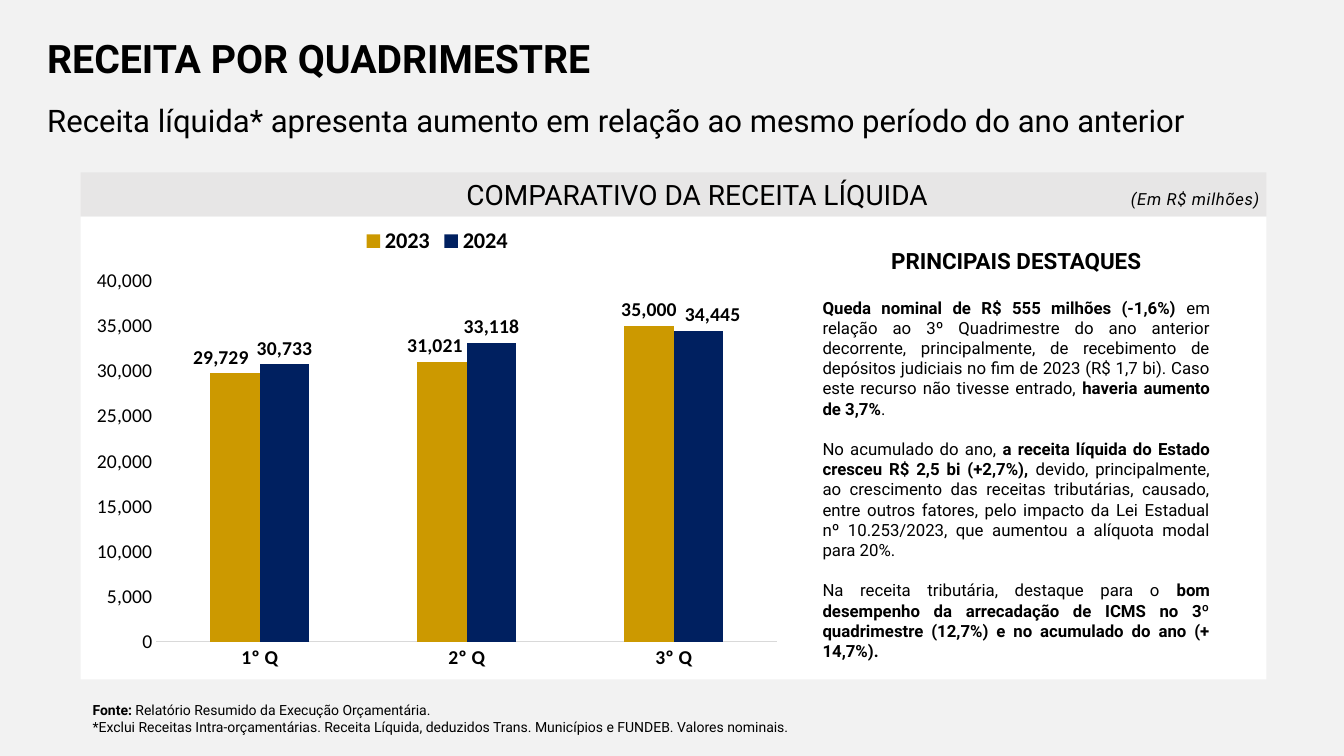
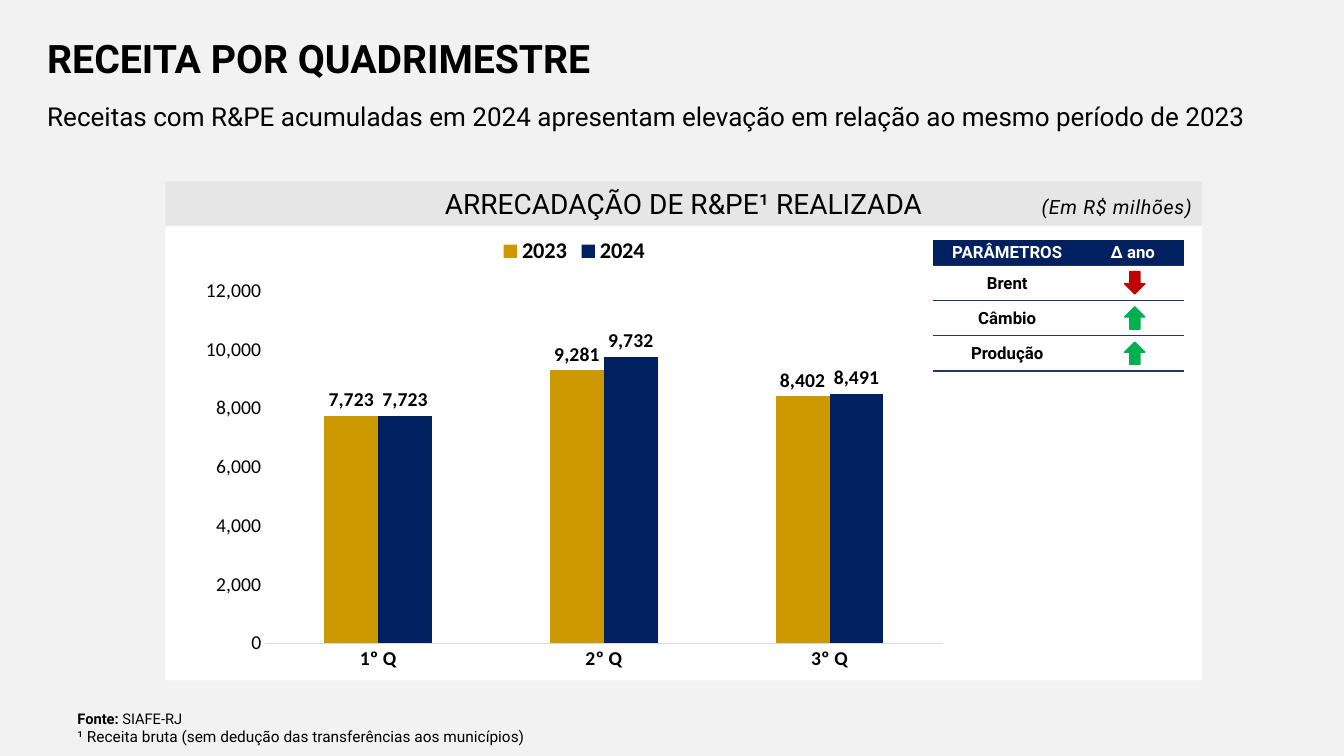
from lxml import etree
from pptx import Presentation
from pptx.chart.data import CategoryChartData
from pptx.dml.color import RGBColor
from pptx.enum import chart as charts, shapes, text
from pptx.oxml import ns
from pptx.util import Inches, Pt

BACKGROUND, BAND, WHITE, BLACK = "F2F2F2", "E7E6E6", "FFFFFF", "000000"
GOLD, NAVY, RULE, AXIS = "CC9900", "002060", "203864", "D9D9D9"
RED, GREEN = "C00000", "00B050"
BODY_FONT, CHART_FONT = "Roboto", "Calibri"
NO_TABLE_STYLE = "{2D5ABB26-0587-4C30-8999-92F81FD0307C}"
ALIGN, ANCHOR = text.PP_ALIGN, text.MSO_ANCHOR

TITLE = "RECEITA POR QUADRIMESTRE"
UNIT = "(Em R$ milhões)"
QUARTERS = ["1º Q", "2º Q", "3º Q"]
BAND_HEIGHT = 0.44

PAGES = [
    dict(
        subtitle="Receita líquida* apresenta aumento em relação ao mesmo período do ano anterior",
        subtitle_size=22.2, subtitle_spacing=1.2,
        heading="COMPARATIVO DA RECEITA LÍQUIDA", heading_indent=0.57,
        card=(0.8, 1.71, 11.76, 5.03),
        unit_box=(11.1, 1.72, 1.49, 0.4), unit_size=11.9, unit_spacing=1.1,
        unit_anchor=ANCHOR.BOTTOM,
        chart_box=(0.82, 2.14, 7.03, 4.6), step=5000, top=40000, number_format="#,##0",
        series={"2023": (29729, 31021, 35000), "2024": (30733, 33118, 34445)},
        label_shifts={("2023", 0): -0.02, ("2023", 1): -0.01, ("2024", 2): 0.02},
        source_box=(0.82, 6.91, 7.85, 0.44),
        source=[
            (10, [("Fonte: ", True), ("Relatório Resumido da Execução Orçamentária.", False)]),
            (10, [("*Exclui Receitas Intra-orçamentárias. Receita Líquida, deduzidos "
                   "Trans. Municípios e FUNDEB. Valores nominais.", False)]),
        ],
    ),
    dict(
        subtitle="Receitas com R&PE acumuladas em 2024 apresentam elevação em relação ao mesmo período de 2023",
        subtitle_size=18.6, subtitle_spacing=1.0,
        heading="ARRECADAÇÃO DE R&PE¹ REALIZADA", heading_indent=0.1,
        card=(1.64, 1.8, 10.28, 4.95),
        unit_box=(10.06, 1.84, 1.86, 0.4), unit_size=14, unit_spacing=1.2,
        unit_anchor=ANCHOR.TOP,
        chart_box=(1.89, 2.24, 7.61, 4.51), step=2_000_000_000, top=12_000_000_000,
        number_format="#,##0,,",
        series={"2023": (7_723_000_000, 9_281_000_000, 8_402_000_000),
                "2024": (7_723_000_000, 9_732_000_000, 8_491_000_000)},
        label_shifts={},
        source_box=(0.67, 6.99, 12.01, 0.46),
        source=[
            (10.5, [("Fonte: ", True), ("SIAFE-RJ", False)]),
            (11, [("¹ Receita bruta (sem dedução das transferências aos municípios)", False)]),
        ],
    ),
]

HIGHLIGHTS_TITLE = "PRINCIPAIS DESTAQUES"
HIGHLIGHTS = [
    [("Queda nominal de R$ 555 milhões (-1,6%)", True),
     (" em relação ao 3º Quadrimestre do ano anterior decorrente, principalmente, de "
      "recebimento de depósitos judiciais no fim de 2023 (R$ 1,7 bi). Caso este recurso "
      "não tivesse entrado, ", False),
     ("haveria aumento de 3,7%", True), (".", False)],
    [("No acumulado do ano, ", False),
     ("a receita líquida do Estado cresceu R$ 2,5 bi (+2,7%), ", True),
     ("devido, principalmente, ao crescimento das receitas tributárias, causado, entre "
      "outros fatores, pelo impacto da Lei Estadual nº 10.253/2023, que aumentou a "
      "alíquota modal para 20%.", False)],
    [("Na receita tributária, destaque para o ", False),
     ("bom desempenho da arrecadação de ICMS no 3º quadrimestre (12,7%) e no acumulado "
      "do ano (+ 14,7%).", True)],
]

PARAMETERS_HEAD = ("PARÂMETROS", "∆ ano")
PARAMETERS = [("Brent", "down"), ("Câmbio", "up"), ("Produção", "up")]
ARROWS = {"down": (shapes.MSO_SHAPE.DOWN_ARROW, RED), "up": (shapes.MSO_SHAPE.UP_ARROW, GREEN)}


def rgb(value):
    return RGBColor.from_string(value)


def inches(box):
    return [Inches(length) for length in box]


def style(font, size, color=BLACK, bold=False, name=BODY_FONT):
    font.size, font.bold, font.name = Pt(size), bold, name
    font.color.rgb = rgb(color)


def write(frame, paragraphs, align=ALIGN.LEFT, anchor=ANCHOR.TOP, spacing=1.0):
    frame.word_wrap = True
    frame.vertical_anchor = anchor
    for index, (size, runs) in enumerate(paragraphs):
        paragraph = frame.paragraphs[0] if index == 0 else frame.add_paragraph()
        paragraph.alignment, paragraph.line_spacing = align, spacing
        for words, bold in runs:
            run = paragraph.add_run()
            run.text = words
            style(run.font, size, bold=bold)
    return frame


def add_text(slide, box, paragraphs, **layout):
    return write(slide.shapes.add_textbox(*inches(box)).text_frame, paragraphs, **layout)


def add_block(slide, kind, box, color, outline=False):
    block = slide.shapes.add_shape(kind, *inches(box))
    block.shadow.inherit = False
    block.fill.solid()
    block.fill.fore_color.rgb = rgb(color)
    if outline:
        block.line.color.rgb = rgb(color)
        block.line.width = Pt(1)
    else:
        block.line.fill.background()
    return block


def shift_label(point, shift):
    label = point.data_label
    style(label.font, 14, bold=True, name=CHART_FONT)
    label.position = charts.XL_LABEL_POSITION.OUTSIDE_END
    layout = etree.Element(ns.qn("c:layout"))
    manual = etree.SubElement(layout, ns.qn("c:manualLayout"))
    for direction, value in (("c:x", shift), ("c:y", 0)):
        etree.SubElement(manual, ns.qn(direction), val=str(value))
    label._get_or_add_dLbl().insert(1, layout)


def add_columns(slide, page):
    data = CategoryChartData(number_format=page["number_format"])
    data.categories = QUARTERS
    for year, values in page["series"].items():
        data.add_series(year, values)
    chart = slide.shapes.add_chart(
        charts.XL_CHART_TYPE.COLUMN_CLUSTERED, *inches(page["chart_box"]), data).chart
    style(chart.font, 14, name=CHART_FONT)
    chart.has_title = False
    chart.has_legend = True
    chart.legend.position = charts.XL_LEGEND_POSITION.TOP
    chart.legend.include_in_layout = False
    style(chart.legend.font, 16, bold=True, name=CHART_FONT)

    for axis, bold in ((chart.category_axis, True), (chart.value_axis, False)):
        axis.major_tick_mark = axis.minor_tick_mark = charts.XL_TICK_MARK.NONE
        axis.has_major_gridlines = False
        style(axis.tick_labels.font, 14, bold=bold, name=CHART_FONT)
    chart.category_axis.format.line.color.rgb = rgb(AXIS)
    chart.category_axis.format.line.width = Pt(0.75)
    amounts = chart.value_axis
    amounts.format.line.fill.background()
    amounts.minimum_scale, amounts.maximum_scale = 0, page["top"]
    amounts.major_unit = page["step"]
    amounts.tick_labels.number_format = page["number_format"]
    amounts.tick_labels.number_format_is_linked = False

    plot = chart.plots[0]
    plot.gap_width, plot.overlap, plot.vary_by_categories = 219, 0, False
    for series, color in zip(plot.series, (GOLD, NAVY)):
        series.format.fill.solid()
        series.format.fill.fore_color.rgb = rgb(color)
        labels = series.data_labels
        labels.show_value = True
        labels.position = charts.XL_LABEL_POSITION.OUTSIDE_END
        labels.number_format = page["number_format"]
        labels.number_format_is_linked = False
        style(labels.font, 14, bold=True, name=CHART_FONT)
        for (year, quarter), shift in page["label_shifts"].items():
            if year == series.name:
                shift_label(series.points[quarter], shift)


def add_page(deck, page):
    slide = deck.slides.add_slide(deck.slide_layouts[6])
    slide.background.fill.solid()
    slide.background.fill.fore_color.rgb = rgb(BACKGROUND)
    add_text(slide, (0.37, 0.21, 8.89, 0.79), [(28, [(TITLE, True)])],
             anchor=ANCHOR.MIDDLE, spacing=0.9)
    add_text(slide, (0.37, 0.86, 12.6, 0.59),
             [(page["subtitle_size"], [(page["subtitle"], False)])],
             anchor=ANCHOR.MIDDLE, spacing=page["subtitle_spacing"])

    left, top, width, height = page["card"]
    rectangle = shapes.MSO_SHAPE.RECTANGLE
    band = add_block(slide, rectangle, (left, top, width, BAND_HEIGHT), BAND)
    write(band.text_frame, [(20, [(page["heading"], False)])],
          align=ALIGN.CENTER, anchor=ANCHOR.MIDDLE)
    band.text_frame.margin_left = Inches(page["heading_indent"])
    add_block(slide, rectangle, (left, top + BAND_HEIGHT, width, height - BAND_HEIGHT), WHITE)

    unit = add_text(slide, page["unit_box"], [(page["unit_size"], [(UNIT, False)])],
                    align=ALIGN.RIGHT, anchor=page["unit_anchor"], spacing=page["unit_spacing"])
    unit_font = unit.paragraphs[0].runs[0].font
    unit_font.italic = True
    unit_font._element.set("spc", "50")

    add_columns(slide, page)
    add_text(slide, page["source_box"], page["source"])
    return slide


def add_highlights(slide):
    paragraphs = [(16, [(HIGHLIGHTS_TITLE, True)])] + [(12, runs) for runs in HIGHLIGHTS]
    frame = add_text(slide, (8.06, 2.4, 4.04, 4.3), paragraphs, align=ALIGN.JUSTIFY)
    heading, first, *others = frame.paragraphs
    heading.alignment = ALIGN.CENTER
    first.space_before = Pt(17)
    for paragraph in others:
        paragraph.space_before = Pt(14.5)


def underline(cell):
    border = etree.Element(ns.qn("a:lnB"), w=str(Pt(1)))
    fill = etree.SubElement(border, ns.qn("a:solidFill"))
    etree.SubElement(fill, ns.qn("a:srgbClr"), val=RULE)
    cell._tc.get_or_add_tcPr().insert(0, border)


def add_parameters(slide):
    left, top, head_height, row_height = 9.25, 2.38, 0.25, 0.35
    widths = (1.48, 1.01)
    rows = [PARAMETERS_HEAD] + [(name, "") for name, _ in PARAMETERS]
    box = (left, top, sum(widths), head_height + row_height * len(PARAMETERS))
    table = slide.shapes.add_table(len(rows), len(widths), *inches(box)).table
    table.first_row = table.horz_banding = False
    table._tbl.tblPr.find(ns.qn("a:tableStyleId")).text = NO_TABLE_STYLE
    for column, width in zip(table.columns, widths):
        column.width = Inches(width)
    for index, words in enumerate(rows):
        table.rows[index].height = Inches(row_height if index else head_height)
        for cell, word in zip(table.rows[index].cells, words):
            cell.margin_left = cell.margin_right = cell.margin_top = Inches(0.01)
            cell.margin_bottom = 0
            cell.vertical_anchor = ANCHOR.MIDDLE
            if index:
                cell.fill.background()
            else:
                cell.fill.solid()
                cell.fill.fore_color.rgb = rgb(NAVY)
            cell.text_frame.text = word
            paragraph = cell.text_frame.paragraphs[0]
            paragraph.alignment = ALIGN.CENTER
            for run in paragraph.runs:
                style(run.font, 12, BLACK if index else WHITE, bold=True)
            underline(cell)

    arrow_width, arrow_height = 0.2, 0.22
    for index, (_, trend) in enumerate(PARAMETERS):
        kind, color = ARROWS[trend]
        middle = top + head_height + row_height * (index + 0.5)
        add_block(slide, kind,
                  (left + widths[0] + (widths[1] - arrow_width) / 2 + 0.02,
                   middle - arrow_height / 2, arrow_width, arrow_height),
                  color, outline=True)


def main():
    deck = Presentation()
    deck.slide_width, deck.slide_height = Inches(13.33), Inches(7.5)
    for page, add_details in zip(PAGES, (add_highlights, add_parameters)):
        add_details(add_page(deck, page))
    deck.save("out.pptx")


if __name__ == "__main__":
    main()
